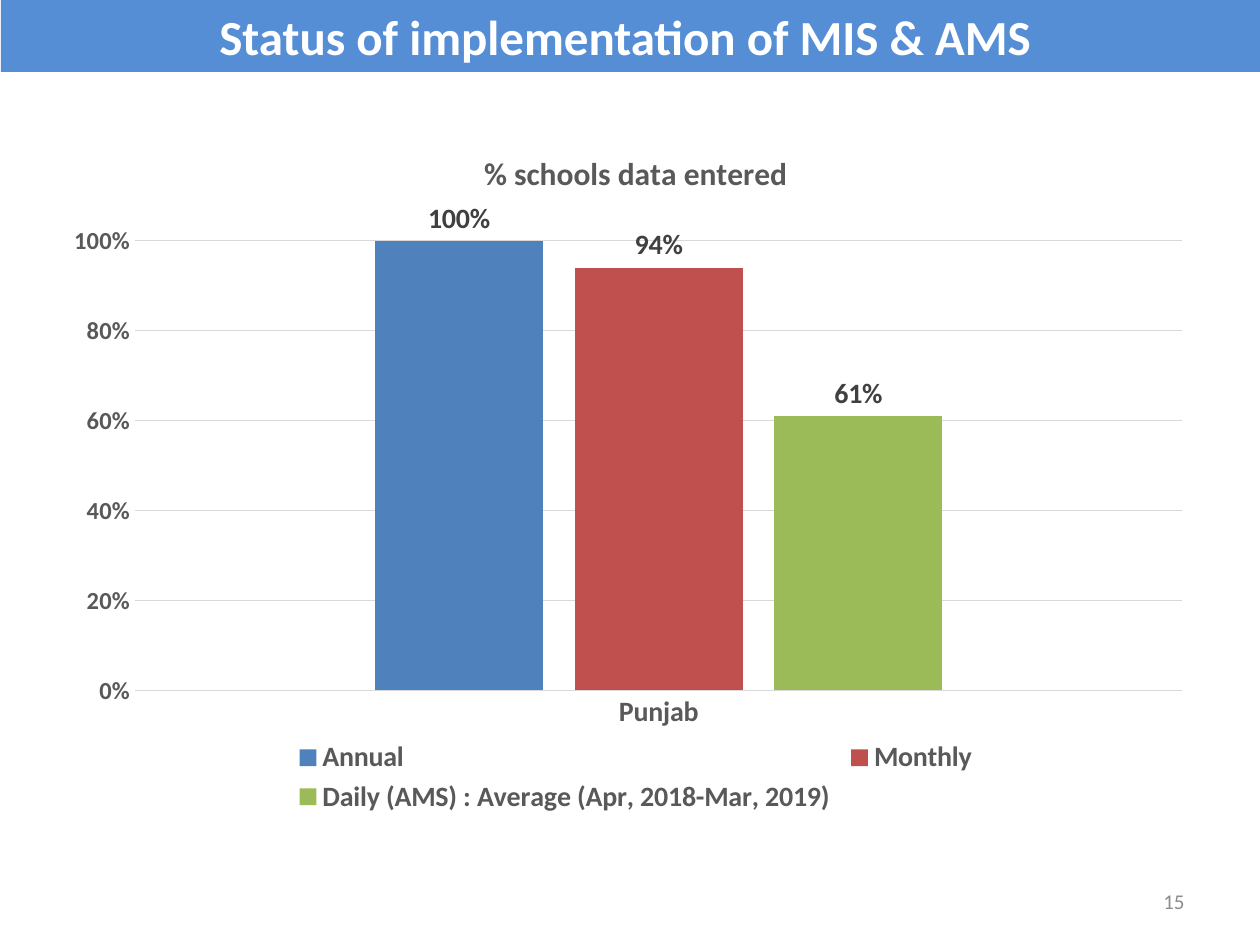
"""Build the slide on the status of MIS and AMS implementation."""
from typing import NamedTuple

from pptx import Presentation
from pptx.chart.data import CategoryChartData
from pptx.dml.color import RGBColor
from pptx.enum.chart import XL_CHART_TYPE as Kind, XL_LABEL_POSITION as Spot
from pptx.enum.chart import XL_LEGEND_POSITION as Side, XL_TICK_MARK as Tick
from pptx.enum.shapes import MSO_SHAPE as Form
from pptx.enum.text import MSO_ANCHOR as Anchor, PP_ALIGN as Align
from pptx.oxml import parse_xml
from pptx.oxml.ns import nsdecls
from pptx.util import Emu, Pt

SCALE = 914400 / 126
FACE = "Calibri"
WHITE = RGBColor(0xFF, 0xFF, 0xFF)
BAND = RGBColor(0x55, 0x8E, 0xD5)
BLUE = RGBColor(0x4F, 0x81, 0xBD)
RED = RGBColor(0xC0, 0x50, 0x4D)
GREEN = RGBColor(0x9B, 0xBB, 0x59)
DARK = RGBColor(0x40, 0x40, 0x40)
GREY = RGBColor(0x59, 0x59, 0x59)
PALE = RGBColor(0x8C, 0x8C, 0x8C)
RULE = RGBColor(0xD9, 0xD9, 0xD9)


class Box(NamedTuple):
    left: int
    top: int
    width: int
    height: int

    def emu(self) -> list[Emu]:
        return [px(side) for side in self]


class Bar(NamedTuple):
    name: str
    value: float
    color: RGBColor


BARS = [
    Bar("Annual", 1, BLUE),
    Bar("Monthly", 0.94, RED),
    Bar("Daily (AMS) : Average (Apr, 2018-Mar, 2019)", 0.61, GREEN),
]


def px(count: int) -> Emu:
    return Emu(round(count * SCALE))


def style(font, size: int, color: RGBColor, bold: bool = True) -> None:
    font.name, font.size, font.bold = FACE, Pt(size), bold
    font.color.rgb = color


def write(shape, text: str, size: int, color: RGBColor, bold: bool, align) -> None:
    frame = shape.text_frame
    frame.word_wrap = True
    frame.vertical_anchor = Anchor.MIDDLE
    para = frame.paragraphs[0]
    para.alignment = align
    run = para.add_run()
    run.text = text
    style(run.font, size, color, bold)


def layout(*sides: float, inner: bool = False):
    target = '<c:layoutTarget val="inner"/>' if inner else ""
    modes = "".join(f'<c:{key}Mode val="edge"/>' for key in "xy")
    spans = "".join(f'<c:{key} val="{val}"/>' for key, val in zip("xywh", sides))
    return parse_xml(
        f'<c:layout {nsdecls("c")}><c:manualLayout>{target}{modes}{spans}'
        "</c:manualLayout></c:layout>"
    )


def draw_axes(chart) -> None:
    names, scale = chart.category_axis, chart.value_axis
    for axis, size in ((names, 16), (scale, 14)):
        axis.major_tick_mark = axis.minor_tick_mark = Tick.NONE
        style(axis.tick_labels.font, size, GREY)
    scale.minimum_scale, scale.maximum_scale, scale.major_unit = 0, 1, 0.2
    scale.tick_labels.number_format = "0%"
    scale.tick_labels.number_format_is_linked = False
    scale.format.line.fill.background()
    for line in (names.format.line, scale.major_gridlines.format.line):
        line.color.rgb, line.width = RULE, Pt(0.75)


def draw_bars(plot) -> None:
    plot.gap_width, plot.overlap, plot.vary_by_categories = 286, -19, False
    for bar, series in zip(BARS, plot.series):
        series.format.fill.solid()
        series.format.fill.fore_color.rgb = bar.color
        labels = series.data_labels
        labels.show_value = True
        labels.number_format, labels.number_format_is_linked = "0%", False
        labels.position = Spot.OUTSIDE_END
        style(labels.font, 16, DARK)


def draw_chart(slide, box: Box) -> None:
    data = CategoryChartData(number_format="0%")
    data.categories = ["Punjab"]
    for bar in BARS:
        data.add_series(bar.name, [bar.value])
    chart = slide.shapes.add_chart(Kind.COLUMN_CLUSTERED, *box.emu(), data).chart
    style(chart.font, 10, RGBColor(0, 0, 0), False)
    run = chart.chart_title.text_frame.paragraphs[0].add_run()
    run.text = "% schools data entered"
    style(run.font, 18, GREY)
    chart.chart_title.include_in_layout = False
    draw_axes(chart)
    draw_bars(chart.plots[0])
    chart.has_legend = True
    legend = chart.legend
    legend.position, legend.include_in_layout = Side.BOTTOM, False
    style(legend.font, 16, GREY)
    area = chart.plots[0]._element.getparent()
    for old in area.xpath("c:layout"):
        area.remove(old)
    area.insert(0, layout(0.054, 0.167, 0.933, 0.648, inner=True))
    for old in legend._element.xpath("c:layout"):
        legend._element.remove(old)
    legend._element.xpath("c:legendPos")[0].addnext(layout(0.19, 0.88, 0.62, 0.12))


def draw_band(slide, box: Box) -> None:
    band = slide.shapes.add_shape(Form.RECTANGLE, *box.emu())
    band.shadow.inherit = False
    band.fill.solid()
    band.fill.fore_color.rgb = BAND
    band.line.fill.background()
    write(band, "Status of implementation of MIS & AMS ", 28, WHITE, True, Align.CENTER)


def main() -> None:
    deck = Presentation()
    deck.slide_width, deck.slide_height = px(1260), px(945)
    slide = deck.slides.add_slide(deck.slide_layouts[6])
    draw_chart(slide, Box(74, 125, 1123, 694))
    draw_band(slide, Box(1, 0, 1259, 72))
    number = slide.shapes.add_textbox(*Box(903, 876, 294, 50).emu())
    write(number, "15", 12, PALE, False, Align.RIGHT)
    deck.save("out.pptx")


if __name__ == "__main__":
    main()
